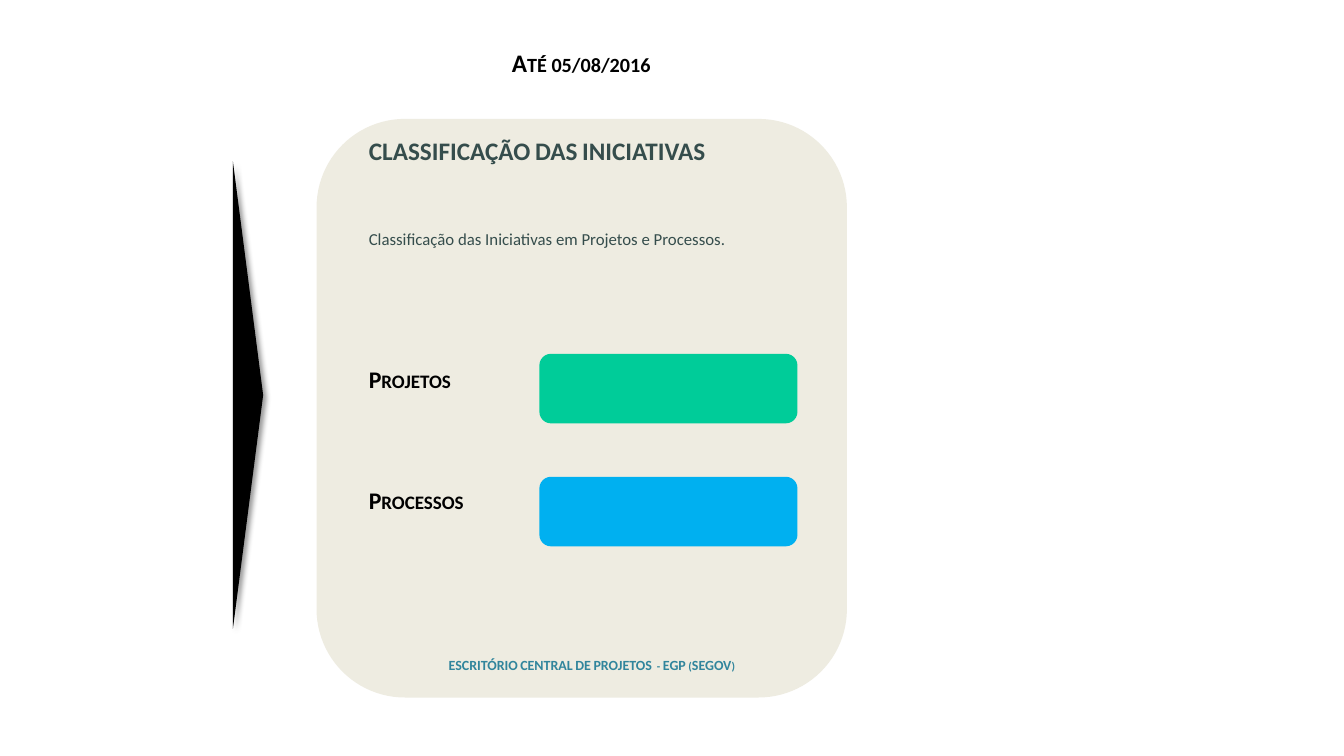
from lxml import etree
from pptx import Presentation
from pptx.dml.color import RGBColor
from pptx.enum import shapes, text
from pptx.oxml.ns import qn
from pptx.util import Inches, Pt

BLACK = RGBColor(0x00, 0x00, 0x00)
SAND = RGBColor(0xEE, 0xEC, 0xE1)
SLATE = RGBColor(0x35, 0x4D, 0x4C)
TEAL = RGBColor(0x31, 0x85, 0x9C)
GREEN = RGBColor(0x00, 0xCC, 0x99)
BLUE = RGBColor(0x00, 0xB0, 0xF0)

FORM = shapes.MSO_SHAPE
ALIGN = text.PP_ALIGN


def write(shape, words, size, color, align=ALIGN.LEFT, bold=True):
    """Fill a text shape; bold text is set in small capitals."""
    frame = shape.text_frame
    frame.word_wrap = True
    frame.auto_size = text.MSO_AUTO_SIZE.NONE
    frame.vertical_anchor = text.MSO_ANCHOR.TOP
    par = frame.paragraphs[0]
    par.alignment = align
    run = par.add_run()
    run.text = words
    look = {"name": "Calibri", "size": Pt(size), "bold": bold}
    for key, value in look.items():
        setattr(run.font, key, value)
    run.font.color.rgb = color
    if bold:
        run.font._element.set("cap", "small")


def add_text(slide, left, top, width, height, *args, **opts):
    box = slide.shapes.add_textbox(Inches(left), Inches(top), Inches(width), Inches(height))
    write(box, *args, **opts)


def add_form(slide, kind, left, top, width, height, color):
    form = slide.shapes.add_shape(kind, Inches(left), Inches(top), Inches(width), Inches(height))
    form.shadow.inherit = False
    form.fill.solid()
    form.fill.fore_color.rgb = color
    form.line.fill.background()
    return form


def add_head(slide, left, top, width, height):
    title = slide.shapes.title
    place = {"left": left, "top": top, "width": width, "height": height}
    for key, value in place.items():
        setattr(title, key, Inches(value))
    write(title, "Até 05/08/2016", 18, BLACK, ALIGN.CENTER)


def add_panel(slide, left, top, width, height):
    add_form(slide, FORM.ROUNDED_RECTANGLE, left, top, width, height, SAND)
    edge = left + 0.42
    add_text(slide, edge, top + 0.11, width - 0.42, 0.5,
             "CLASSIFICAÇÃO DAS INICIATIVAS", 18, SLATE)
    add_text(slide, edge, top + 1.04, 4.57, 0.72,
             "Classificação das Iniciativas em Projetos e Processos.",
             12, SLATE, ALIGN.JUSTIFY, bold=False)
    rows = [("Projetos", GREEN), ("Processos", BLUE)]
    for i, (name, color) in enumerate(rows):
        add_form(slide, FORM.ROUNDED_RECTANGLE, left + 2.21, top + 2.33 + i * 1.22,
                 2.56, 0.69, color)
        add_text(slide, edge, top + 2.39 + i * 1.2, 1.64, 0.55, name, 17, BLACK)
    add_text(slide, left + 0.2, top + height - 0.46, width - 0.2, 0.38,
             "ESCRITÓRIO CENTRAL DE PROJETOS  - EGP (SEGOV)", 10, TEAL, ALIGN.CENTER)


def add_arrow(slide, left, top, width, height):
    """Place a tall triangle pointing right, with a soft shadow, in the box."""
    form = add_form(slide, FORM.ISOSCELES_TRIANGLE, left + (width - height) / 2,
                    top + (height - width) / 2, height, width, BLACK)
    form.rotation = 90
    effects = form._element.spPr.find(qn("a:effectLst"))
    shade = etree.SubElement(effects, qn("a:outerShdw"), blurRad=str(Pt(4)),
                             dist=str(Pt(3)), dir=str(45 * 60000), rotWithShape="0")
    tint = etree.SubElement(shade, qn("a:srgbClr"), val=str(BLACK))
    etree.SubElement(tint, qn("a:alpha"), val="40000")


def main():
    deck = Presentation()
    deck.slide_width, deck.slide_height = Inches(13.33), Inches(7.5)
    slide = deck.slides.add_slide(deck.slide_layouts[5])
    add_head(slide, 3.14, 0.42, 5.25, 0.75)
    add_panel(slide, 3.14, 1.18, 5.26, 5.74)
    add_arrow(slide, 2.31, 1.6, 0.3, 4.64)
    deck.save("out.pptx")


if __name__ == "__main__":
    main()
